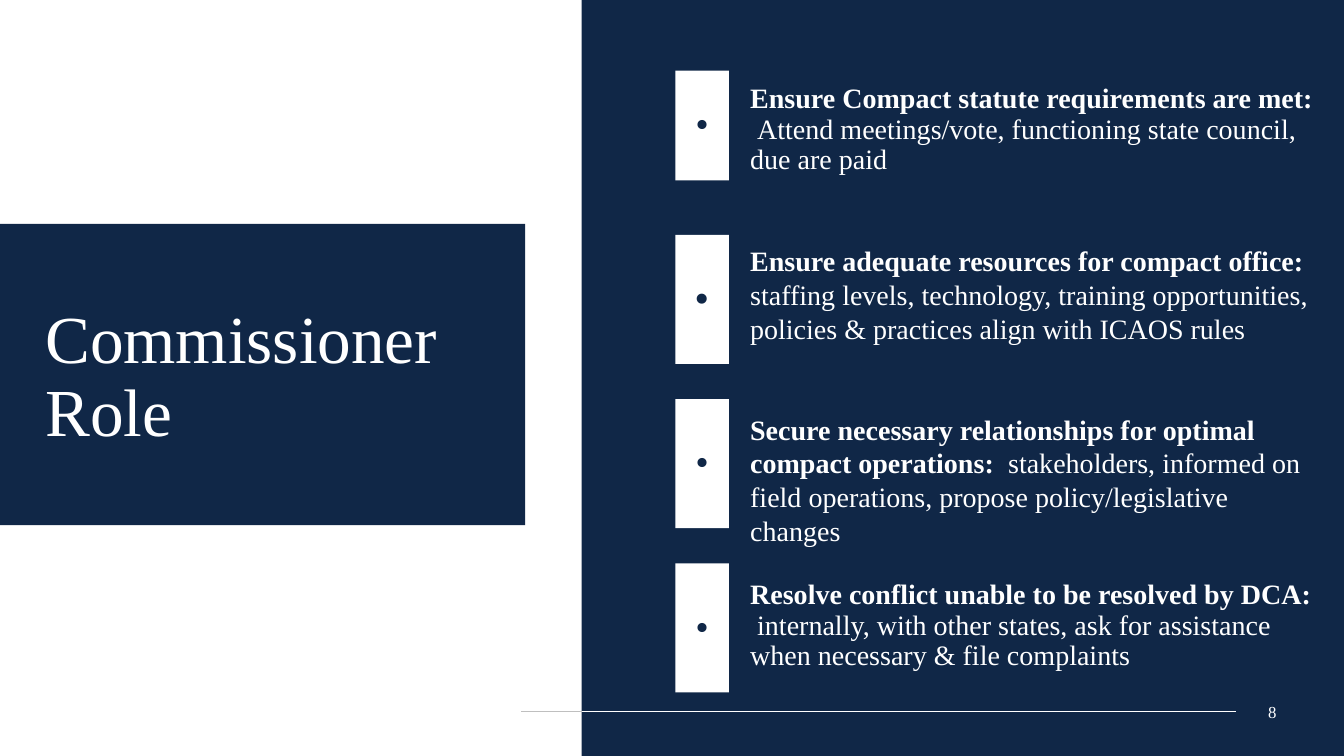
from lxml import etree
from pptx import Presentation
from pptx.dml.color import RGBColor
from pptx.enum.shapes import MSO_CONNECTOR as CONN, MSO_SHAPE as SHAPE
from pptx.enum.text import MSO_ANCHOR as ANCHOR, PP_ALIGN as ALIGN
from pptx.oxml.ns import qn
from pptx.util import Inches, Pt

COLORS = {"navy": "102747", "white": "FFFFFF", "gray": "BFBFBF"}
FONT = "Times New Roman"

# marker height, marker size, text offset, text height, line spacing, heading, detail
DUTIES = [
    (1.09, 40, 0.14, 1.12, 0.9, "Ensure Compact statute requirements are met:  ",
     "Attend meetings/vote, functioning state council, due are paid"),
    (1.28, 44, 0.09, 1.01, 1.0, "Ensure adequate resources for compact office: ",
     "staffing levels, technology, training opportunities, "
     "policies & practices align with ICAOS rules"),
    (1.28, 40, 0.13, 1.01, 1.0,
     "Secure necessary relationships for optimal compact operations:  ",
     "stakeholders, informed on field operations, propose policy/legislative changes"),
    (1.28, 40, 0.17, 1.11, 0.9, "Resolve conflict unable to be resolved by DCA:  ",
     "internally, with other states, ask for assistance when necessary & file complaints"),
]
DUTY_PITCH = 1.63


def rgb(name):
    return RGBColor.from_string(COLORS[name])


def add_rect(s, x, y, w, h, color):
    sp = s.shapes.add_shape(SHAPE.RECTANGLE, Inches(x), Inches(y), Inches(w), Inches(h))
    sp.shadow.inherit = False
    sp.fill.solid()
    sp.fill.fore_color.rgb = rgb(color)
    sp.line.fill.background()
    return sp


def add_rule(s, x1, x2, y, color):
    line = s.shapes.add_connector(CONN.STRAIGHT, Inches(x1), Inches(y), Inches(x2), Inches(y))
    line.line.color.rgb = rgb(color)
    line.line.width = Pt(0.5)
    etree.SubElement(line._element.spPr, qn("a:effectLst"))


def write(sp, runs, size, color="white", align=ALIGN.LEFT, anchor=ANCHOR.MIDDLE, spacing=1.0):
    """Fill a shape with one paragraph of (text, bold) runs."""
    tf = sp.text_frame
    tf.word_wrap = True
    tf.vertical_anchor = anchor
    p = tf.paragraphs[0]
    p.alignment = align
    p.line_spacing = spacing
    for text, bold in runs:
        r = p.add_run()
        r.text = text
        r.font.name = FONT
        r.font.size = Pt(size)
        r.font.bold = bold
        r.font.color.rgb = rgb(color)


def add_text(s, x, y, w, h, runs, size, **style):
    """Add a text box without insets."""
    sp = s.shapes.add_textbox(Inches(x), Inches(y), Inches(w), Inches(h))
    tf = sp.text_frame
    tf.margin_left = tf.margin_top = tf.margin_right = tf.margin_bottom = 0
    write(sp, runs, size, **style)


def add_duty(s, x, y, duty):
    height, dot_size, offset, text_height, spacing, heading, detail = duty
    marker = add_rect(s, x, y, 0.53, height, "white")
    write(marker, [("∙", True)], dot_size, color="navy", align=ALIGN.CENTER, spacing=0.9)
    add_text(s, x + 0.74, y + offset, 5.61, text_height,
             [(heading, True), (detail, False)], 20, anchor=ANCHOR.TOP, spacing=spacing)


def add_duties_panel(s, x, y, w, h):
    add_rect(s, x, y, w, h, "navy")
    for i, duty in enumerate(DUTIES):
        add_duty(s, x + 0.93, y + 0.7 + i * DUTY_PITCH, duty)


def add_footer(s, x, y):
    """Draw the rule, gray on white and white on navy, and the slide number."""
    add_rule(s, x, x + 0.6, y, "gray")
    add_rule(s, x + 0.6, x + 7.09, y, "white")
    add_text(s, x + 7.24, y - 0.2, 0.42, 0.4, [("8", False)], 12, align=ALIGN.CENTER)


def add_title_block(s, x, y, w, h):
    add_rect(s, x, y, w, h, "navy")
    add_text(s, x + 0.45, y + 0.8, 4.1, 1.46, [("Commissioner Role", False)], 48, spacing=0.9)


def main():
    prs = Presentation()
    prs.slide_width, prs.slide_height = Inches(13.33), Inches(7.5)
    s = prs.slides.add_slide(prs.slide_layouts[6])
    add_duties_panel(s, 5.77, 0, 7.56, 7.5)
    add_footer(s, 5.17, 7.06)
    add_title_block(s, 0, 2.22, 5.21, 2.99)
    prs.save("out.pptx")


if __name__ == "__main__":
    main()
